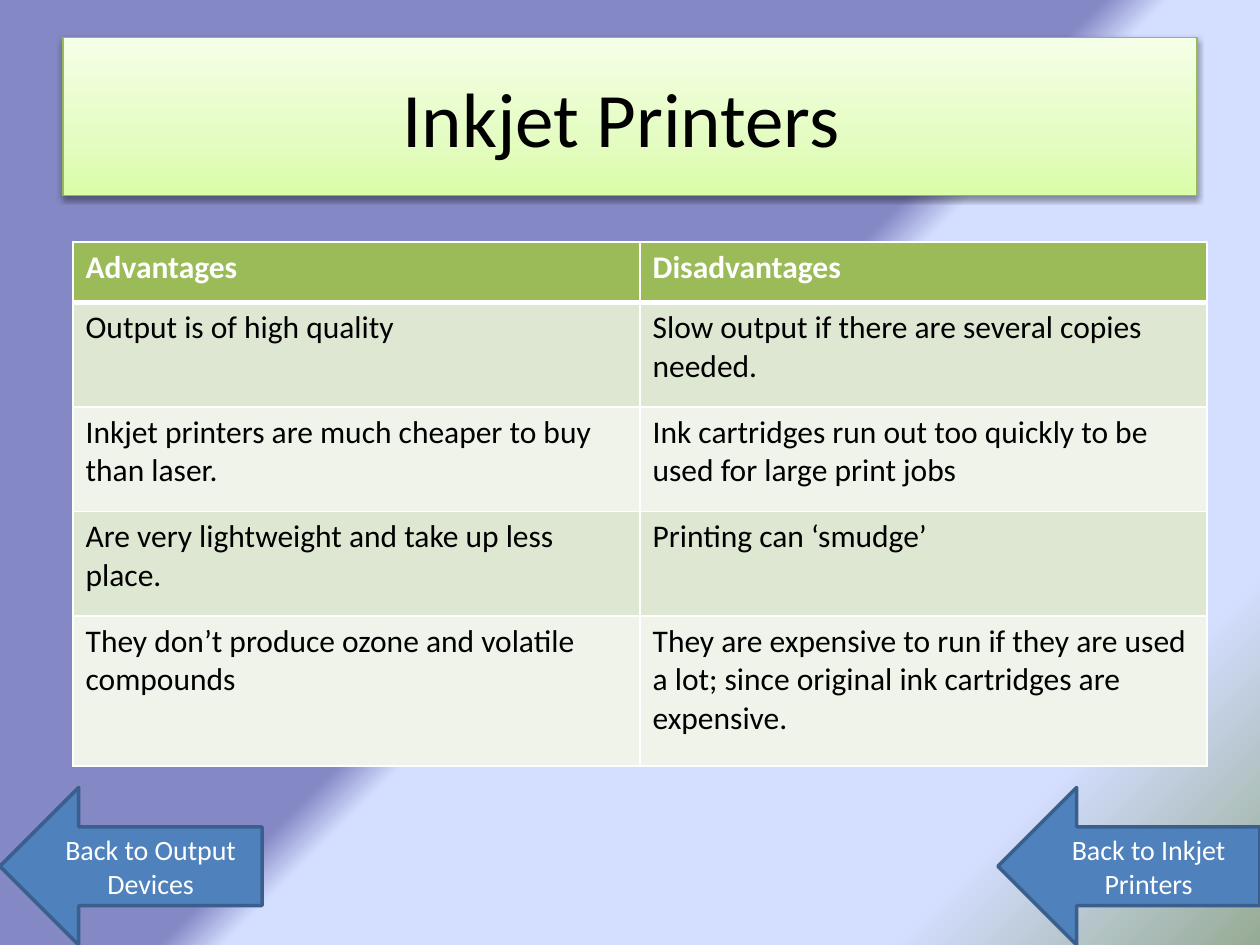
from lxml.etree import SubElement
from pptx import Presentation
from pptx.dml.color import RGBColor
from pptx.enum.shapes import MSO_SHAPE as Preset
from pptx.enum.text import MSO_ANCHOR as Anchor, PP_ALIGN as Align
from pptx.oxml.ns import qn
from pptx.util import Inches, Pt

WIDTH, HEIGHT = 10, 7.5

ROWS = [
    ("Advantages", "Disadvantages"),
    ("Output is of high quality",
     "Slow output if there are several copies needed."),
    ("Inkjet printers are much cheaper to buy than laser.",
     "Ink cartridges run out too quickly to be used for large print jobs"),
    ("Are very lightweight and take up less place.", "Printing can ‘smudge’"),
    ("They don’t produce ozone and volatile compounds",
     "They are expensive to run if they are used a lot; "
     "since original ink cartridges are expensive."),
]
ROW_HEIGHTS = [0.48, 0.83, 0.83, 0.83, 1.19]


def color(value):
    return RGBColor.from_string(value)


def element(parent, tag, **attributes):
    return SubElement(parent, qn(tag), {k: str(v) for k, v in attributes.items()})


def set_gradient(fill, stops, angle):
    """Give a fill any number of (percent, colour) stops."""
    fill.gradient()
    stop_list = fill._fill._gradFill.find(qn("a:gsLst"))
    for old_stop in list(stop_list):
        stop_list.remove(old_stop)
    for position, value in stops:
        stop = element(stop_list, "a:gs", pos=position * 1000)
        element(stop, "a:srgbClr", val=value)
    direction = stop_list.getparent().find(qn("a:lin"))
    direction.set("ang", str(angle * 60000))
    direction.set("scaled", "0")


def write(frame, text, size=18, fill="000000", bold=False, align=Align.LEFT,
          anchor=None, font="Calibri"):
    frame.word_wrap = True
    if anchor is not None:
        frame.vertical_anchor = anchor
    paragraph = frame.paragraphs[0]
    paragraph.alignment = align
    run = paragraph.add_run()
    run.text = text
    run.font.name, run.font.size, run.font.bold = font, Pt(size), bold
    run.font.color.rgb = color(fill)


class PrinterSlide:
    accent, bands = "9BBB59", ("DEE7D1", "EFF3EA")
    arrow_fill, arrow_line = "4F81BD", "3A5F8C"

    def __init__(self, presentation):
        self.slide = presentation.slides.add_slide(presentation.slide_layouts[5])

    def box(self, left, top, width, height):
        """Turn shares of the slide's size into lengths."""
        return [Inches(left * WIDTH), Inches(top * HEIGHT),
                Inches(width * WIDTH), Inches(height * HEIGHT)]

    def background(self, stops, angle):
        set_gradient(self.slide.background.fill, stops, angle)

    def title(self, text, *place):
        shape = self.slide.shapes.title
        shape.left, shape.top, shape.width, shape.height = self.box(*place)
        set_gradient(shape.fill, [(0, "DAFDA7"), (35, "E4FCC2"), (100, "F5FFE7")], 270)
        shape.line.color.rgb, shape.line.width = color("98B955"), Pt(0.75)
        # Soft shadow straight below
        effects = element(shape._element.spPr, "a:effectLst")
        shadow = element(effects, "a:outerShdw", blurRad=Pt(3.1), dist=Pt(1.6),
                         dir=90 * 60000, rotWithShape=0)
        element(element(shadow, "a:srgbClr", val="000000"), "a:alpha", val=38000)
        write(shape.text_frame, text, size=44, align=Align.CENTER, anchor=Anchor.MIDDLE)

    def cell(self, cell, text, header, fill):
        write(cell.text_frame, text, bold=header, fill="FFFFFF" if header else "000000")
        properties = cell._tc.get_or_add_tcPr()
        for side in "LRTB":
            width = 3 if header and side == "B" else 1
            border = element(properties, f"a:ln{side}", w=Pt(width))
            element(element(border, "a:solidFill"), "a:srgbClr", val="FFFFFF")
        cell.fill.solid()
        cell.fill.fore_color.rgb = color(fill)

    def table(self, rows, heights, left, top, width):
        place = self.box(left, top, width, sum(heights) / HEIGHT)
        table = self.slide.shapes.add_table(len(rows), len(rows[0]), *place).table
        for index, (texts, height) in enumerate(zip(rows, heights)):
            table.rows[index].height = Inches(height)
            fill = self.bands[(index - 1) % 2] if index else self.accent
            for column, text in enumerate(texts):
                self.cell(table.cell(index, column), text, index == 0, fill)

    def back_arrow(self, text, *place):
        shape = self.slide.shapes.add_shape(Preset.RIGHT_ARROW, *self.box(*place))
        shape._element.spPr.find(qn("a:xfrm")).set("flipH", "1")
        shape.shadow.inherit = False
        shape.fill.solid()
        shape.fill.fore_color.rgb = color(self.arrow_fill)
        shape.line.color.rgb, shape.line.width = color(self.arrow_line), Pt(2)
        write(shape.text_frame, text, size=16, fill="FFFFFF",
              align=Align.CENTER, anchor=Anchor.MIDDLE)


def main():
    presentation = Presentation()
    presentation.slide_width, presentation.slide_height = Inches(WIDTH), Inches(HEIGHT)
    page = PrinterSlide(presentation)

    # Background and title
    page.background([(50, "8488C4"), (53, "D4DEFF"), (83, "D4DEFF"), (100, "96AB94")], 45)
    page.title("Inkjet Printers ", 0.05, 0.04, 0.9, 1 / 6)

    # Comparison table
    page.table(ROWS, ROW_HEIGHTS, 0.058, 1.92 / HEIGHT, 0.9)

    # Navigation arrows in the bottom corners
    width, height = 0.208, 1 / 6
    for text, left in (("Back to Output Devices", 0),
                       ("Back to Inkjet Printers", 1 - width)):
        page.back_arrow(text, left, 1 - height, width, height)

    presentation.save("out.pptx")


if __name__ == "__main__":
    main()
